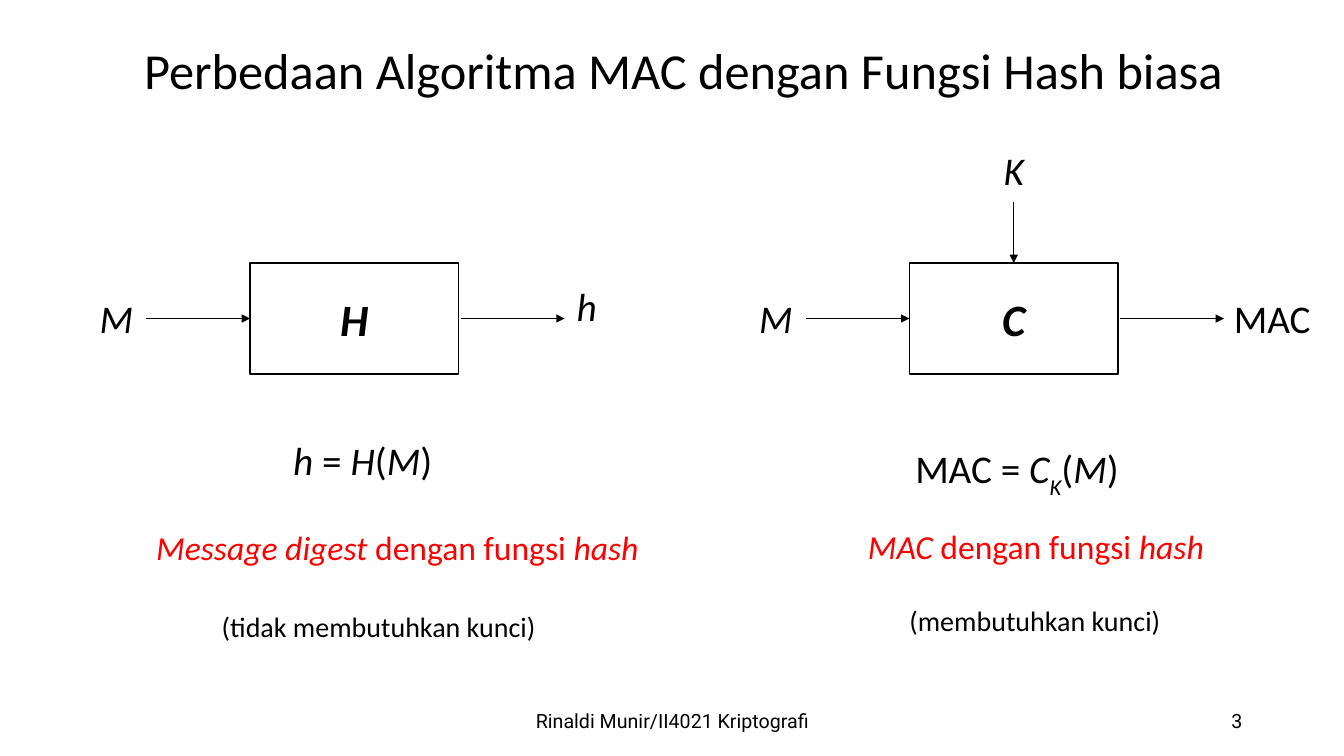
from lxml import etree
from pptx import Presentation
from pptx import util as u
from pptx.dml.color import RGBColor
from pptx.enum import shapes, text
from pptx.oxml.ns import qn

COLORS = {"ink": "000000", "accent": "FF0000"}
LEFT, CENTER, RIGHT = text.PP_ALIGN.LEFT, text.PP_ALIGN.CENTER, text.PP_ALIGN.RIGHT


def rgb(name):
    """Return the named colour."""
    return RGBColor.from_string(COLORS[name])


def write(tf, runs, size=28, color="ink", font="Calibri", align=LEFT,
          anchor=text.MSO_ANCHOR.TOP, wrap=False):
    """Fill a text frame with (wording, style) runs; i, b and s mean italic, bold, subscript."""
    tf.word_wrap = wrap
    tf.vertical_anchor = anchor
    p = tf.paragraphs[0]
    p.alignment = align
    for wording, style in runs:
        r = p.add_run()
        r.text = wording
        r.font.name, r.font.size = font, u.Pt(size)
        r.font.color.rgb = rgb(color)
        r.font.italic, r.font.bold = "i" in style, "b" in style
        if "s" in style:
            r.font._element.set("baseline", "-30000")


def add_text(s, box, runs, grow=True, **fmt):
    """Add a text box at (left, top, width, height)."""
    tf = s.shapes.add_textbox(*map(u.Inches, box)).text_frame
    write(tf, runs, **fmt)
    tf.auto_size = text.MSO_AUTO_SIZE.SHAPE_TO_FIT_TEXT if grow else text.MSO_AUTO_SIZE.NONE


def add_arrow(s, x1, y1, x2, y2):
    """Draw a thin arrow from the first point to the second."""
    c = s.shapes.add_connector(shapes.MSO_CONNECTOR.STRAIGHT, *map(u.Inches, (x1, y1, x2, y2)))
    c.line.color.rgb = rgb("ink")
    c.line.width = u.Pt(1)
    etree.SubElement(c.line._get_or_add_ln(), qn("a:tailEnd"), type="triangle")
    etree.SubElement(c._element.spPr, qn("a:effectLst"))


def add_diagram(s, x, y, name, output, output_box, key=None):
    """Draw the flow from message through a function box to its output."""
    box_x, box_y, box_w, box_h = x + 1.59, y + 1.21, 2.07, 1.1
    mid_x, mid_y = box_x + box_w / 2, box_y + box_h / 2
    sp = s.shapes.add_shape(shapes.MSO_SHAPE.RECTANGLE,
                            *map(u.Inches, (box_x, box_y, box_w, box_h)))
    sp.shadow.inherit = False
    sp.fill.background()
    sp.line.color.rgb = rgb("ink")
    sp.line.width = u.Pt(1)
    write(sp.text_frame, [(name, "bi")], size=32, align=CENTER,
          anchor=text.MSO_ANCHOR.MIDDLE, wrap=True)
    for start in (box_x - 1.03, box_x + box_w + 0.02):
        add_arrow(s, start, mid_y, start + 1.03, mid_y)
    add_text(s, (x, y + 1.47, 0.54, 0.57), [("M", "i")])
    dx, dy, w = output_box
    add_text(s, (x + dx, y + dy, w, 0.57), output)
    if key:
        add_arrow(s, mid_x, box_y - 0.61, mid_x, box_y)
        add_text(s, (mid_x - 0.2, y, 0.62, 0.57), [(key, "i")], wrap=True)


def add_captions(s, x, y, formula, label, note):
    """Stack formula, red label and note, each as (dx, dy, width, runs)."""
    looks = ((0.57, 28, "ink"), (0.5, 24, "accent"), (0.44, 20, "ink"))
    for (dx, dy, w, runs), (h, size, color) in zip((formula, label, note), looks):
        add_text(s, (x + dx, y + dy, w, h), runs, size=size, color=color)


def add_footer(s, y):
    """Place the course name and the page number."""
    for x, w, wording, align in ((4.42, 4.5, "Rinaldi Munir/II4021 Kriptografi", CENTER),
                                 (9.42, 3, "3", RIGHT)):
        add_text(s, (x, y, w, 0.4), [(wording, "")], grow=False, size=14, font="Roboto",
                 align=align, anchor=text.MSO_ANCHOR.MIDDLE, wrap=True)


def main():
    """Build and save the slide."""
    prs = Presentation()
    prs.slide_width, prs.slide_height = u.Inches(13.33), u.Inches(7.5)
    s = prs.slides.add_slide(prs.slide_layouts[6])
    add_text(s, (1.33, 0.34, 11.01, 0.71),
             [("Perbedaan Algoritma MAC dengan Fungsi Hash biasa", "")], size=36)

    hash_x, mac_x, top, captions = 0.89, 7.43, 1.4, 4.28
    label_end = [("dengan fungsi ", ""), ("hash", "i")]
    argument = [("(", ""), ("M", "i"), (")", "")]

    add_diagram(s, hash_x, top, "H", [("h", "i")], (4.73, 1.35, 0.41))
    add_captions(s, hash_x, captions,
                 (1.92, 0, 1.6, [("h ", "i"), ("= ", ""), ("H", "i")] + argument),
                 (0.56, 0.9, 5.01, [("Message digest ", "i")] + label_end),
                 (1.21, 1.72, 3.35, [("(tidak membutuhkan kunci)", "")]))

    add_diagram(s, mac_x, top, "C", [("MAC", "")], (4.71, 1.47, 0.97), key="K")
    add_captions(s, mac_x, captions,
                 (1.55, 0.08, 2.26, [("MAC = ", ""), ("C", "i"), ("K", "is")] + argument),
                 (1.08, 0.89, 3.57, [("MAC ", "i")] + label_end),
                 (1.49, 1.66, 2.78, [("(membutuhkan kunci)", "")]))

    add_footer(s, 6.95)
    prs.save("out.pptx")


if __name__ == "__main__":
    main()
